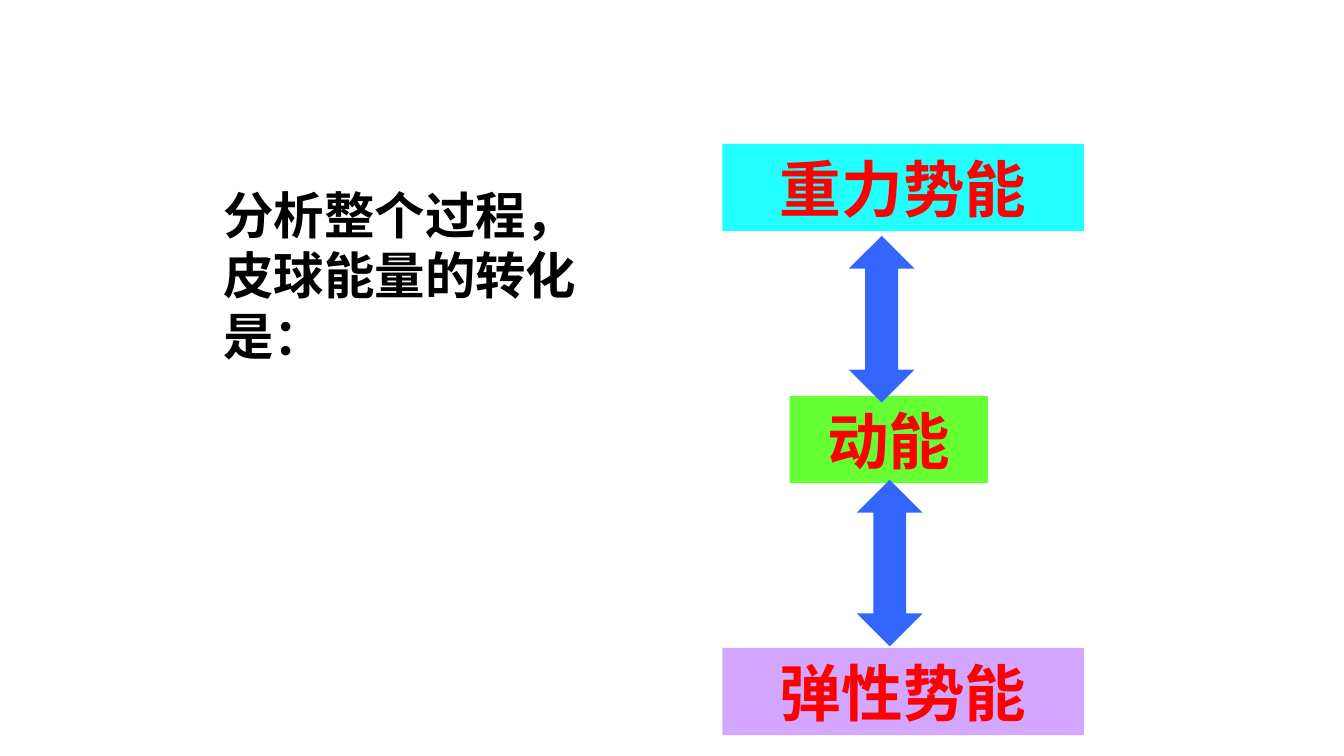
"""Build a slide on the energy changes of a bouncing ball."""
from dataclasses import dataclass
from lxml import etree
from pptx import Presentation
from pptx import util as u
from pptx.dml.color import RGBColor
from pptx.enum import shapes, text
from pptx.oxml.ns import qn

SCALE = 4572


@dataclass(frozen=True)
class Theme:
    """Hold the colours, type sizes and font."""
    font: str = "Times New Roman"
    ink: str = "000000"
    label: str = "FF0000"
    arrow: str = "3366FF"
    cyan: str = "00FFFF"
    green: str = "66FF33"
    violet: str = "CC99FF"
    body: int = 27
    head: int = 33


THEME = Theme()


def px(*nums):
    """Turn px into EMU."""
    return [u.Emu(n * SCALE) for n in nums]


def add_run(para, words, size, color):
    """Add one bold run."""
    run = para.add_run()
    run.text = words
    font = run.font
    font.name, font.size, font.bold = THEME.font, u.Pt(size), True
    font.color.rgb = RGBColor.from_string(color)


def add_note(slide, words, *area):
    """Add a wrapped text box."""
    frame = slide.shapes.add_textbox(*px(*area)).text_frame
    frame.word_wrap = True
    add_run(frame.paragraphs[0], words, THEME.body, THEME.ink)


def add_form(slide, kind, color, *area, alpha=100):
    """Add a plain filled shape without line or shadow."""
    form = slide.shapes.add_shape(kind, *px(*area))
    form.shadow.inherit = False
    form.line.fill.background()
    form.fill.solid()
    form.fill.fore_color.rgb = RGBColor.from_string(color)
    if alpha < 100:
        tint = form._element.spPr.find(qn("a:solidFill"))[0]
        etree.SubElement(tint, qn("a:alpha"), val=str(alpha * 1000))
    return form


def add_box(slide, words, color, *area, alpha=100):
    """Add a box with a centred label."""
    box = add_form(slide, shapes.MSO_SHAPE.RECTANGLE, color, *area, alpha=alpha)
    frame = box.text_frame
    frame.word_wrap = True
    frame.vertical_anchor = text.MSO_ANCHOR.MIDDLE
    para = frame.paragraphs[0]
    para.alignment = text.PP_ALIGN.CENTER
    add_run(para, words, THEME.head, THEME.label)


def add_arrow(slide, left, top):
    """Add an upright double arrow."""
    arrow = add_form(slide, shapes.MSO_SHAPE.LEFT_RIGHT_ARROW, THEME.arrow,
                     left, top, 248, 98)
    arrow.adjustments[0] = 0.5
    arrow.adjustments[1] = 0.5
    arrow.rotation = 90


def main():
    """Build and save the slide."""
    deck = Presentation()
    deck.slide_width, deck.slide_height = px(2000, 1125)
    slide = deck.slides.add_slide(deck.slide_layouts[6])
    add_note(slide, "分析整个过程，皮球能量的转化是：", 313, 264, 638, 290)
    boxes = [("动能", THEME.green, 1175, 589, 295, 100),
             ("重力势能", THEME.cyan, 1075, 214, 538, 87),
             ("弹性势能", THEME.violet, 1075, 964, 538, 86)]
    for words, color, left, top, width, alpha in boxes:
        add_box(slide, words, color, left, top, width, 130, alpha=alpha)
    for left, top in [(1188, 426), (1200, 789)]:
        add_arrow(slide, left, top)
    deck.save("out.pptx")


if __name__ == "__main__":
    main()
